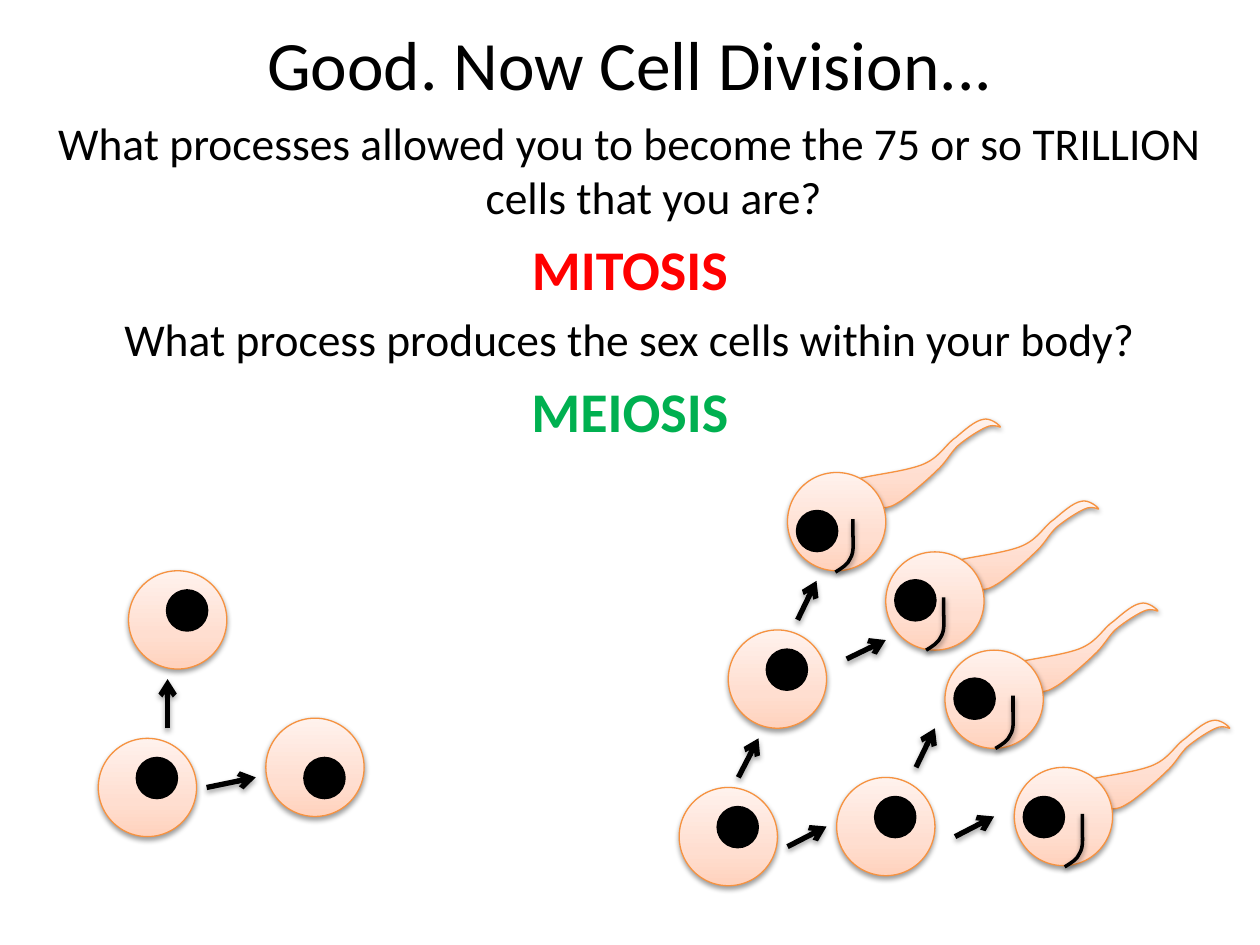
from copy import deepcopy

from lxml import etree
from pptx import Presentation
from pptx.dml.color import RGBColor
from pptx.enum.shapes import MSO_CONNECTOR, MSO_SHAPE
from pptx.enum.text import MSO_ANCHOR, PP_ALIGN
from pptx.oxml.ns import qn
from pptx.util import Inches, Pt

OVAL = MSO_SHAPE.OVAL
STRAIGHT = MSO_CONNECTOR.STRAIGHT
CENTER = PP_ALIGN.CENTER
MIDDLE = MSO_ANCHOR.MIDDLE

FONT = "Calibri"
COLORS = {
    "black": "000000", "red": "FF0000", "green": "00B050", "rim": "F69240",
    "cell_dark": "FFD2BD", "cell_mid": "FFDED0", "cell_light": "FFF2ED",
}
CELL_STOPS = [(0, "cell_dark"), (0.35, "cell_mid"), (1, "cell_light")]
CELL_SIZE, NUCLEUS_SIZE = 0.78, 0.31

# Outlines: start point, then two control points and an end point per curve
TAIL = [
    (0.10, 0.49),
    (0.19, 0.46), (0.49, 0.43), (0.62, 0.37),
    (0.75, 0.31), (0.79, 0.21), (0.87, 0.16),
    (0.94, 0.10), (1.02, 0.03), (1.08, 0.02),
    (1.14, 0.00), (1.22, 0.07), (1.22, 0.08),
    (1.23, 0.09), (1.17, 0.05), (1.11, 0.08),
    (1.06, 0.10), (0.95, 0.17), (0.88, 0.23),
    (0.82, 0.29), (0.79, 0.36), (0.71, 0.43),
    (0.64, 0.50), (0.51, 0.61), (0.44, 0.66),
    (0.36, 0.71), (0.34, 0.72), (0.28, 0.72),
    (0.23, 0.73), (0.15, 0.70), (0.11, 0.68),
    (0.07, 0.65), (0.04, 0.60), (0.04, 0.57),
    (0.04, 0.54), (0.00, 0.53), (0.10, 0.49),
]
SMILE = [
    (0.00, 0.42),
    (0.05, 0.39), (0.10, 0.36), (0.12, 0.31),
    (0.15, 0.26), (0.14, 0.18), (0.14, 0.13),
    (0.14, 0.07), (0.14, 0.04), (0.14, 0.00),
]


def rgb(name):
    return RGBColor.from_string(COLORS[name])


def set_line(sp, color, width):
    sp.line.color.rgb = rgb(color)
    sp.line.width = Pt(width)


def add_shadow(sp, opacity, distance):
    """Soft shadow straight below; call it after the line is set."""
    spPr = sp._element.spPr
    effects = spPr.find(qn("a:effectLst"))
    if effects is None:
        effects = etree.SubElement(spPr, qn("a:effectLst"))
    shadow = etree.SubElement(effects, qn("a:outerShdw"), blurRad=str(Pt(3.1)),
                              dist=str(Pt(distance)), dir="5400000", rotWithShape="0")
    color = etree.SubElement(shadow, qn("a:srgbClr"), val=COLORS["black"])
    etree.SubElement(color, qn("a:alpha"), val=str(opacity * 1000))


def style_membrane(sp):
    sp.fill.gradient()
    sp.fill.gradient_angle = 90
    first = sp._element.spPr.find(".//" + qn("a:gs"))
    first.addnext(deepcopy(first))
    for stop, (position, color) in zip(sp.fill.gradient_stops, CELL_STOPS):
        stop.position = position
        stop.color.rgb = rgb(color)
    set_line(sp, "rim", 0.75)
    sp.shadow.inherit = False
    add_shadow(sp, 38, 1.6)


def add_curve(s, x, y, outline, close):
    """Draw a chain of cubic curves with its box corner at x, y."""
    points = [(Inches(x + px), Inches(y + py)) for px, py in outline]
    builder = s.shapes.build_freeform(*points[0], scale=1.0)
    builder.add_line_segments(points[1:], close=close)
    sp = builder.convert_to_shape()
    segments = list(sp._element.spPr.iter(qn("a:lnTo")))
    for i in range(0, len(outline) - 1, 3):
        curve = etree.Element(qn("a:cubicBezTo"))
        segments[i].addprevious(curve)
        for segment in segments[i:i + 3]:
            curve.append(segment[0])
            segment.getparent().remove(segment)
    return sp


def add_cell(s, x, y, nucleus):
    dx, dy = nucleus
    body = s.shapes.add_shape(OVAL, Inches(x), Inches(y), Inches(CELL_SIZE), Inches(CELL_SIZE))
    style_membrane(body)
    core = s.shapes.add_shape(OVAL, Inches(x + dx), Inches(y + dy),
                              Inches(NUCLEUS_SIZE), Inches(NUCLEUS_SIZE))
    core.fill.solid()
    core.fill.fore_color.rgb = rgb("black")
    set_line(core, "black", 2)
    core.shadow.inherit = False


def add_sperm(s, x, y, nucleus, tail, smile):
    style_membrane(add_curve(s, x + tail[0], y + tail[1], TAIL, True))
    add_cell(s, x, y, nucleus)
    sp = add_curve(s, x + smile[0], y + smile[1], SMILE, False)
    sp.fill.background()
    set_line(sp, "black", 2)
    sp.shadow.inherit = False
    add_shadow(sp, 38, 1.6)


def add_arrows(s, left, top, arrows):
    for x1, y1, x2, y2 in arrows:
        line = s.shapes.add_connector(STRAIGHT, Inches(left + x1), Inches(top + y1),
                                      Inches(left + x2), Inches(top + y2))
        set_line(line, "black", 3)
        ln = line._element.spPr.find(qn("a:ln"))
        etree.SubElement(ln, qn("a:tailEnd"), type="arrow")
        add_shadow(line, 35, 1.8)


def add_mitosis(s, left, top):
    for x, y, nucleus in [(0, 1.33, (0.31, 0.16)), (1.33, 1.17, (0.31, 0.32)),
                          (0.24, 0, (0.31, 0.16))]:
        add_cell(s, left + x, top + y, nucleus)
    add_arrows(s, left, top, [(0.55, 1.25, 0.55, 0.86), (0.86, 1.72, 1.25, 1.64)])


def add_meiosis(s, left, top):
    for x, y in [(0, 2.94), (0.39, 1.69), (1.25, 2.86)]:
        add_cell(s, left + x, top + y, (0.31, 0.16))
    for x, y, nucleus, tail, smile in [
        (0.86, 0.44, (0.08, 0.31), (0.47, -0.44), (0.38, 0.37)),
        (1.64, 1.07, (0.08, 0.23), (0.47, -0.42), (0.32, 0.36)),
        (2.11, 1.85, (0.08, 0.23), (0.47, -0.39), (0.40, 0.36)),
        (2.66, 2.78, (0.08, 0.24), (0.49, -0.39), (0.40, 0.37)),
    ]:
        add_sperm(s, left + x, top + y, nucleus, tail, smile)
    add_arrows(s, left, top, [
        (0.47, 2.86, 0.63, 2.55), (0.86, 3.41, 1.17, 3.25), (0.94, 1.61, 1.09, 1.30),
        (1.33, 1.92, 1.64, 1.77), (1.88, 2.78, 2.03, 2.47), (2.19, 3.33, 2.50, 3.17),
    ])


def add_text_frame(s, left, top, width, height):
    tf = s.shapes.add_textbox(Inches(left), Inches(top), Inches(width), Inches(height)).text_frame
    tf.word_wrap = True
    return tf


def fill_paragraph(p, text, size, color, bold=False):
    p.text = text
    p.alignment = CENTER
    font = p.runs[0].font
    font.name, font.size, font.bold = FONT, Pt(size), bold
    font.color.rgb = rgb(color)


def add_title(s, left, top, width, height):
    tf = add_text_frame(s, left, top, width, height)
    tf.vertical_anchor = MIDDLE
    fill_paragraph(tf.paragraphs[0], "Good. Now Cell Division...", 39.6, "black")


def add_questions(s, left, top, width, height):
    tf = add_text_frame(s, left, top, width, height)
    for i, (question, answer, color) in enumerate([
        ("What processes allowed you to become the 75 or so TRILLION cells that you are?",
         "MITOSIS", "red"),
        ("What process produces the sex cells within your body?", "MEIOSIS", "green"),
    ]):
        p = tf.add_paragraph() if i else tf.paragraphs[0]
        fill_paragraph(p, question, 26, "black")
        fill_paragraph(tf.add_paragraph(), answer, 32, color, True)
    for p in tf.paragraphs:
        p.space_before = Pt(p.runs[0].font.size.pt * 0.2)
        pPr = p._p.get_or_add_pPr()
        pPr.set("marL", str(Inches(0.38)))
        pPr.set("indent", str(Inches(-0.38)))


def main():
    prs = Presentation()
    prs.slide_width, prs.slide_height = Inches(10), Inches(7.5)
    s = prs.slides.add_slide(prs.slide_layouts[6])
    add_title(s, 0.5, 0.3, 9, 0.4)
    add_questions(s, 0.16, 0.86, 9.68, 6.41)
    add_mitosis(s, 0.78, 4.53)
    add_meiosis(s, 5.39, 3.31)
    prs.save("out.pptx")


if __name__ == "__main__":
    main()
